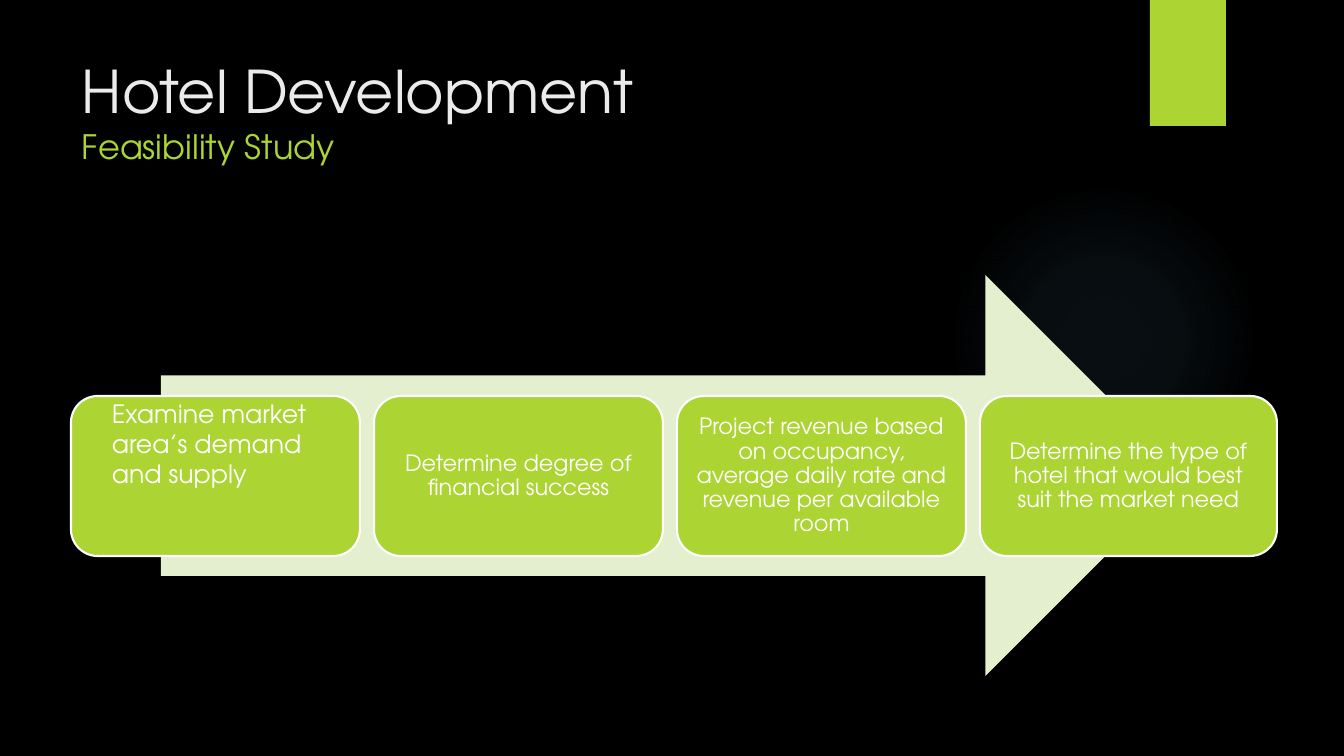
from dataclasses import dataclass

from lxml import etree
from pptx import Presentation
from pptx.dml.color import RGBColor
from pptx.enum.shapes import MSO_SHAPE
from pptx.enum.text import MSO_ANCHOR, PP_ALIGN
from pptx.oxml import parse_xml
from pptx.oxml.ns import nsdecls
from pptx.shapes.autoshape import Shape
from pptx.slide import Slide
from pptx.text.text import TextFrame
from pptx.util import Emu, Pt

RECT, ROUND = MSO_SHAPE.RECTANGLE, MSO_SHAPE.ROUNDED_RECTANGLE
ARROW, OVAL = MSO_SHAPE.RIGHT_ARROW, MSO_SHAPE.OVAL
MIDDLE, TOP = MSO_ANCHOR.MIDDLE, MSO_ANCHOR.TOP
CENTER = PP_ALIGN.CENTER

BLACK = RGBColor(0x00, 0x00, 0x00)
WHITE = RGBColor(0xFF, 0xFF, 0xFF)
PALE = RGBColor(0xEB, 0xEB, 0xEB)
LIME = RGBColor(0xAC, 0xD4, 0x33)
MINT = RGBColor(0xE3, 0xEF, 0xCE)
GLOW = RGBColor(0x7A, 0xC4, 0xF0)
FONT = "TeX Gyre Adventor"
SCALE = 914400 / 100.8


@dataclass
class Box:
    left: int
    top: int
    width: int
    height: int

    def emu(self) -> list[Emu]:
        sides = (self.left, self.top, self.width, self.height)
        return [px(side) for side in sides]


@dataclass
class Step:
    width: int
    text: str


STEPS = [
    Step(289, ""),
    Step(289, "Determine degree of financial success"),
    Step(289, "Project revenue based on occupancy, average daily rate "
              "and revenue per available room"),
    Step(297, "Determine the type of hotel that would best suit the market need"),
]
FIRST = ["Examine market", "area’s demand", "and supply"]
LEFT, PITCH = 71, 303


def px(count: int) -> Emu:
    return Emu(round(count * SCALE))


def add_form(slide: Slide, kind: MSO_SHAPE, box: Box, fill: RGBColor) -> Shape:
    form = slide.shapes.add_shape(kind, *box.emu())
    form.shadow.inherit = False
    form.fill.solid()
    form.fill.fore_color.rgb = fill
    form.line.fill.background()
    return form


def add_frame(slide: Slide, box: Box) -> TextFrame:
    frame = slide.shapes.add_textbox(*box.emu()).text_frame
    frame.word_wrap = True
    frame.vertical_anchor = TOP
    return frame


def add_run(para, text: str, size: int, color: RGBColor) -> None:
    run = para.add_run()
    run.text = text
    for key, value in {"name": FONT, "size": Pt(size)}.items():
        setattr(run.font, key, value)
    run.font.color.rgb = color


def add_glow(slide: Slide) -> None:
    """Draw a circle that fades out from its centre."""
    form = add_form(slide, OVAL, Box(949, 184, 310, 310), GLOW)
    stops = "".join(
        f'<a:gs pos="{pos * 1000}"><a:srgbClr val="{GLOW}">'
        f'<a:alpha val="{alpha * 1000}"/></a:srgbClr></a:gs>'
        for pos, alpha in ((0, 7), (36, 6), (69, 0), (100, 0))
    )
    grad = parse_xml(
        f'<a:gradFill {nsdecls("a")} rotWithShape="1"><a:gsLst>{stops}</a:gsLst>'
        '<a:path path="circle"><a:fillToRect l="50000" t="50000" r="50000" '
        'b="50000"/></a:path></a:gradFill>'
    )
    props = form.element.spPr
    solid = props.find(etree.QName(grad.nsmap["a"], "solidFill"))
    props.replace(solid, grad)


def add_title(slide: Slide) -> None:
    para = add_frame(slide, Box(72, 50, 1037, 154)).paragraphs[0]
    add_run(para, "Hotel Development", 42, PALE)
    para.add_line_break()
    add_run(para, "Feasibility Study", 24, LIME)


def add_step(slide: Slide, left: int, step: Step) -> None:
    form = add_form(slide, ROUND, Box(left, 396, step.width, 160), LIME)
    form.line.color.rgb = WHITE
    form.line.width = Pt(1.5)
    if not step.text:
        return
    frame = form.text_frame
    looks = {"word_wrap": True, "vertical_anchor": MIDDLE}
    for side in ("left", "top", "right", "bottom"):
        looks[f"margin_{side}"] = px(7)
    for key, value in looks.items():
        setattr(frame, key, value)
    para = frame.paragraphs[0]
    for key, value in {"alignment": CENTER, "line_spacing": 0.9}.items():
        setattr(para, key, value)
    add_run(para, step.text, 16, WHITE)


def add_first(slide: Slide) -> None:
    frame = add_frame(slide, Box(102, 393, 242, 102))
    for index, line in enumerate(FIRST):
        para = frame.add_paragraph() if index else frame.paragraphs[0]
        add_run(para, line, 18, WHITE)


def main() -> None:
    deck = Presentation()
    deck.slide_width, deck.slide_height = px(1344), px(756)
    slide = deck.slides.add_slide(deck.slide_layouts[6])
    slide.background.fill.solid()
    slide.background.fill.fore_color.rgb = BLACK
    add_glow(slide)
    add_form(slide, RECT, Box(1150, 0, 76, 126), LIME)
    add_title(slide)
    add_form(slide, ARROW, Box(161, 275, 1025, 401), MINT)
    for index, step in enumerate(STEPS):
        add_step(slide, LEFT + index * PITCH, step)
    add_first(slide)
    deck.save("out.pptx")


if __name__ == "__main__":
    main()
